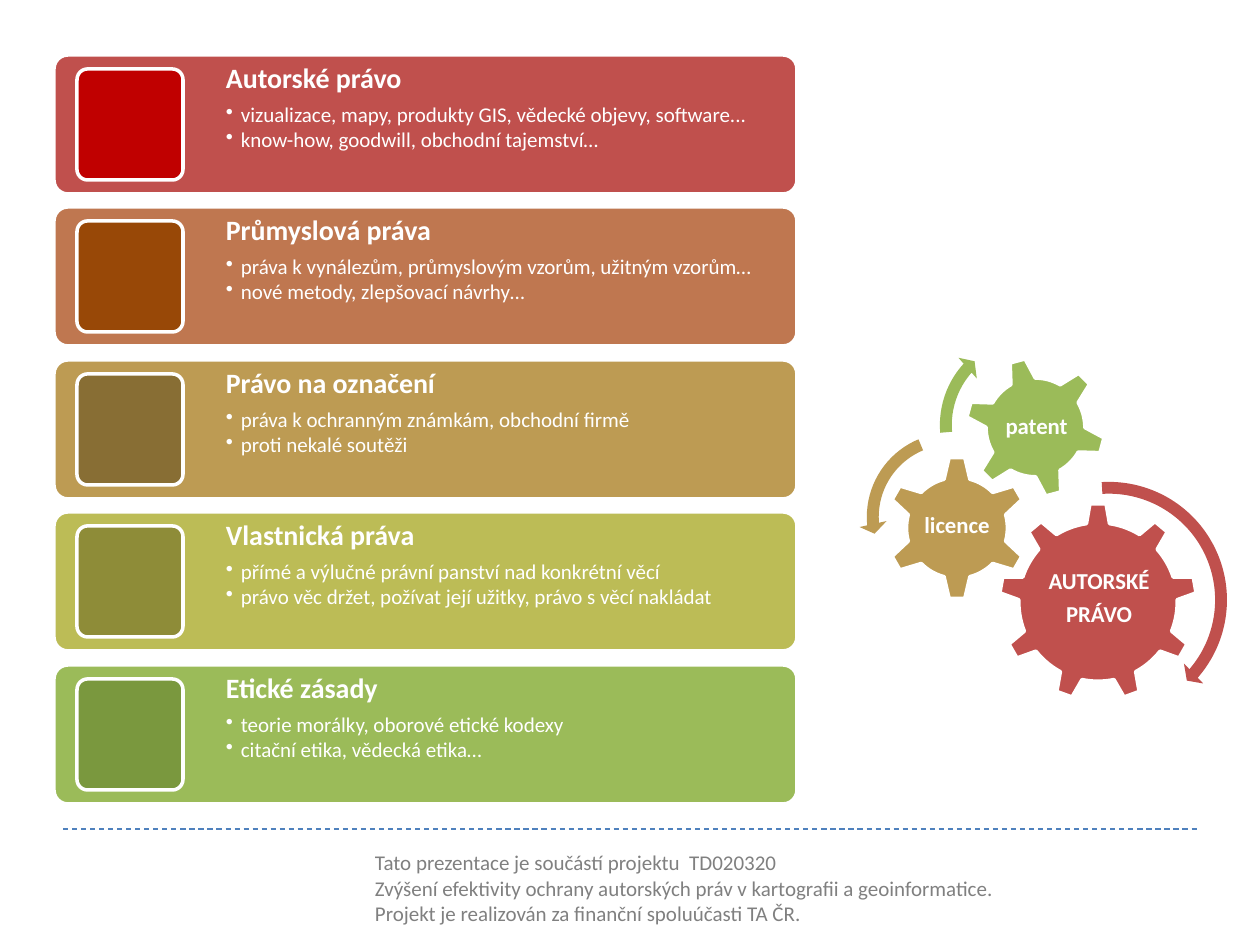
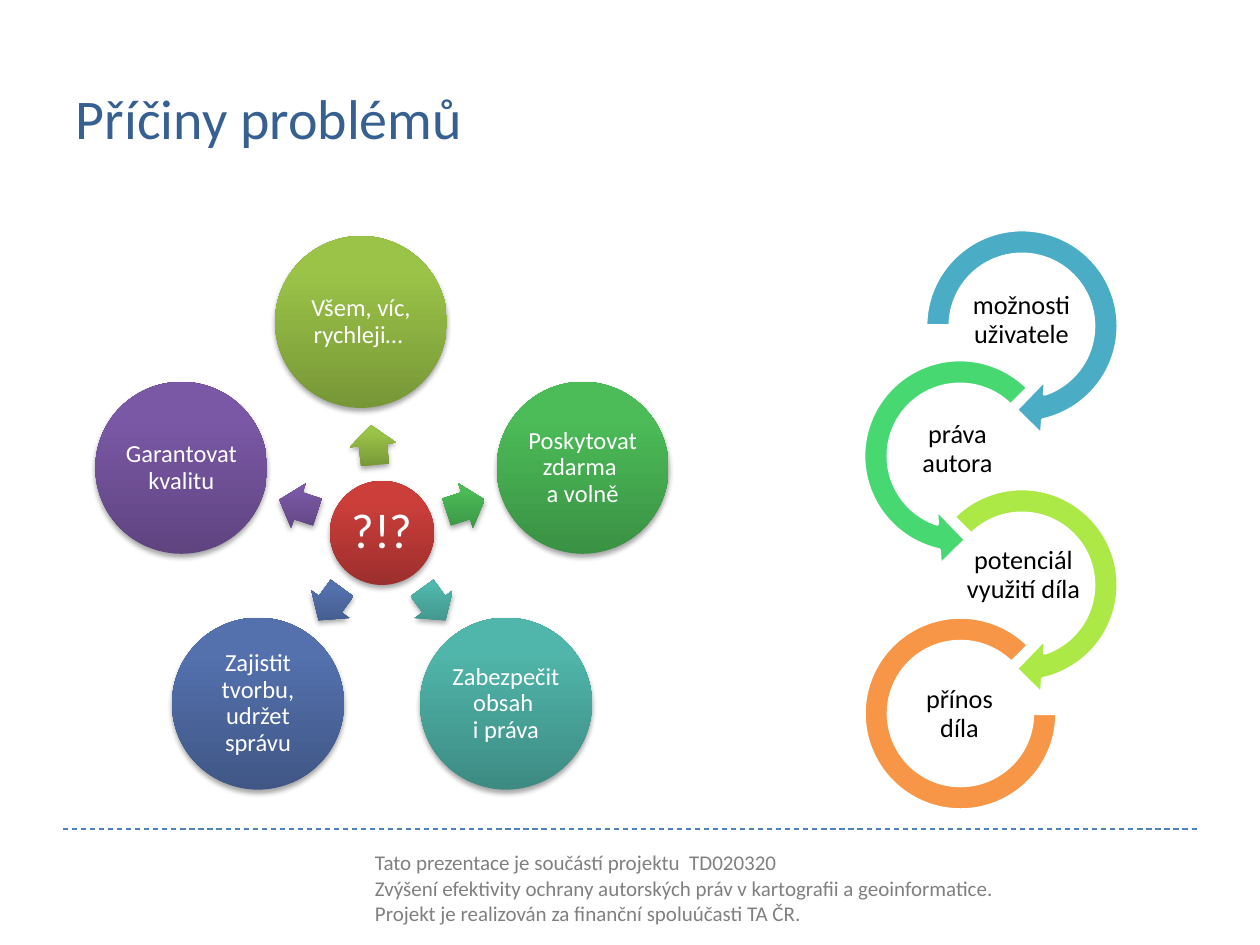
from math import cos, radians, sin

from pptx import Presentation
from pptx.dml.color import RGBColor
from pptx.enum.dml import MSO_LINE
from pptx.enum.shapes import MSO_CONNECTOR, MSO_SHAPE as SHP
from pptx.enum.text import MSO_ANCHOR as ANC, PP_ALIGN as AL
from pptx.oxml import parse_xml
from pptx.oxml.ns import nsdecls, qn
from pptx.util import Pt

PX = 914400 / 126
FONT = "Calibri"
COLORS = {
    "white": "FFFFFF", "black": "000000", "grey": "808080",
    "title": "376092", "rule": "4F81BD",
    "red": "C0504D", "rust": "BF7750", "gold": "BD9B53",
    "olive": "BCBC56", "green": "9BBB59",
    "red_icon": "C00000", "rust_icon": "984807", "gold_icon": "886E34",
    "olive_icon": "8E8C38", "green_icon": "7A983E",
    "teal": "4BACC6", "mint": "47D872", "lime": "ACE946", "orange": "F79646",
}
# Dark and light ends of the gradients on the wheel
GRADIENTS = {
    "red": ("9C2F2D", "CB3E3A"), "lime": ("779737", "9BC348"),
    "green": ("3A9144", "4CBC58"), "teal": ("3D8B83", "50B5AA"),
    "blue": ("405786", "5471AE"), "violet": ("5F4480", "7B58A6"),
}
DIAGRAM = {"alignment": AL.CENTER, "line_spacing": 0.9}
BAND_HEAD = {"line_spacing": 0.9, "space_after": Pt(5.6)}
BAND_ITEM = {"line_spacing": 0.9, "space_after": Pt(1.8)}


def emu(*lengths):
    return [round(n * PX) for n in lengths]


def rgb(name):
    return RGBColor.from_string(COLORS[name])


def add_shape(slide, kind, box, fill, line="white", adj=()):
    sp = slide.shapes.add_shape(kind, *emu(*box))
    sp.shadow.inherit = False
    for i, value in enumerate(adj):
        sp.adjustments[i] = value
    if fill:
        sp.fill.solid()
        sp.fill.fore_color.rgb = rgb(fill)
    if line:
        sp.line.color.rgb = rgb(line)
        sp.line.width = Pt(2)
    else:
        sp.line.fill.background()
    return sp


def add_text_box(slide, box, inset, anchor=ANC.TOP):
    tf = slide.shapes.add_textbox(*emu(*box)).text_frame
    margin_x, margin_y = emu(*inset)
    layout = {
        "word_wrap": True, "vertical_anchor": anchor,
        "margin_left": margin_x, "margin_right": margin_x,
        "margin_top": margin_y, "margin_bottom": margin_y,
    }
    for key, value in layout.items():
        setattr(tf, key, value)
    return tf


def add_line(tf, text, size, color, bold=False, bullet=False, **layout):
    """Write one paragraph; a line feed in the text is a line break."""
    p = tf.paragraphs[0] if not tf.paragraphs[0].runs else tf.add_paragraph()
    p.text = text
    if bullet:
        indent, = emu(15)
        pPr = p._p.get_or_add_pPr()
        pPr.set("marL", str(indent))
        pPr.set("indent", str(-indent))
        pPr.append(parse_xml(f'<a:buChar {nsdecls("a")} char="•"/>'))
    for key, value in layout.items():
        setattr(p, key, value)
    for r in p.runs:
        for key, value in {"name": FONT, "size": Pt(size), "bold": bold}.items():
            setattr(r.font, key, value)
        r.font.color.rgb = rgb(color)


def add_label(slide, box, lines, size, color="white", bold=False, inset=2):
    tf = add_text_box(slide, box, (inset, inset), ANC.MIDDLE)
    for text in lines:
        add_line(tf, text, size, color, bold,
                 space_after=Pt(round(size * 0.35, 1)), **DIAGRAM)


def arrow_adj(band, head, tip, start, head_width):
    """Percentages and degrees to the adjustments of a circular arrow."""
    return [band / 100, head * 0.6, tip * 0.6, start * 0.6, head_width / 100]


def add_gradient(sp, name):
    sp.fill.gradient()
    sp.fill.gradient_angle = 90
    for stop, position, hex_color in zip(sp.fill.gradient_stops, (0, 0.8), GRADIENTS[name]):
        stop.position = position
        stop.color.rgb = RGBColor.from_string(hex_color)
    spPr = sp._element.spPr
    spPr.find(qn("a:gradFill")).set("rotWithShape", "0")
    spPr.find(qn("a:effectLst")).append(parse_xml(
        f'<a:outerShdw {nsdecls("a")} blurRad="{Pt(3.1)}" dist="{Pt(1.8)}" '
        'dir="5400000" rotWithShape="0"><a:srgbClr val="000000">'
        '<a:alpha val="35000"/></a:srgbClr></a:outerShdw>'))


def add_footer(slide):
    # Dashed rule
    x1, x2, y = emu(63, 1197, 829)
    rule = slide.shapes.add_connector(MSO_CONNECTOR.STRAIGHT, x1, y, x2, y)
    rule.line.color.rgb = rgb("rule")
    rule.line.width = Pt(0.75)
    rule.line.dash_style = MSO_LINE.DASH
    rule._element.spPr.append(parse_xml(f'<a:effectLst {nsdecls("a")}/>'))
    # Project note
    tf = add_text_box(slide, (362, 844, 853, 89), (13, 6))
    for text in ("Tato prezentace je součástí projektu  TD020320",
                 "Zvýšení efektivity ochrany autorských práv v kartografii a geoinformatice.",
                 "Projekt je realizován za finanční spoluúčasti TA ČR."):
        add_line(tf, text, 12, "grey")


def add_title(slide, text):
    tf = add_text_box(slide, (63, 38, 1134, 158), (13, 6), ANC.MIDDLE)
    add_line(tf, text, 32, "title")


def add_law_bands(slide, box, bands):
    left, top, width, height = box
    band_h = 139
    for i, (color, head, items) in enumerate(bands):
        y = top + i * (height - band_h) // (len(bands) - 1)
        add_shape(slide, SHP.ROUNDED_RECTANGLE, (left, y, width, band_h), color, adj=[0.1])
        tf = add_text_box(slide, (left + 163, y, width - 163, band_h), (9, 9))
        add_line(tf, head, 16, "white", bold=True, **BAND_HEAD)
        for item in items:
            add_line(tf, item, 12, "white", bullet=True, **BAND_ITEM)
        add_shape(slide, SHP.ROUNDED_RECTANGLE, (left + 23, y + 14, 106, 111),
                  color + "_icon", adj=[0.1])


def add_gears(slide, left, top):
    # Shape, x, y, size, rotation, colour, label lines, label box
    gears = [
        (SHP.GEAR_9, 140, 177, 198, 0, "red", ["AUTORSKÉ", "PRÁVO"], (181, 222, 118, 101)),
        (SHP.GEAR_6, 26, 130, 144, 0, "gold", ["licence"], (62, 165, 72, 71)),
        (SHP.GEAR_6, 106, 31, 141, 345, "green", ["patent"], (138, 62, 79, 79)),
    ]
    for kind, x, y, size, turn, color, lines, (lx, ly, lw, lh) in gears:
        sp = add_shape(slide, kind, (left + x, top + y, size, size), color)
        sp.rotation = turn
        add_label(slide, (left + lx, top + ly, lw, lh), lines, 13, bold=True)
    # Turning arrows
    arrows = [
        (SHP.CIRCULAR_ARROW, 124, 148, 252, "red", (4.7, 5, 41, 266.5, 5.5)),
        (SHP.LEFT_CIRCULAR_ARROW, 0, 99, 184, "gold", (6.5, 7.2, 174.8, 247.3, 7.5)),
        (SHP.CIRCULAR_ARROW, 73, 0, 198, "green", (6, 6.6, 221.9, 175.1, 7)),
    ]
    for kind, x, y, size, color, adj in arrows:
        add_shape(slide, kind, (left + x, top + y, size, size), color, None, arrow_adj(*adj))


def add_wheel(slide, cx, cy, hub_text, causes):
    def centred(kind, x, y, w, h, color):
        sp = add_shape(slide, kind, (x - w / 2, y - h / 2, w, h), None, None)
        add_gradient(sp, color)
        return sp

    # Hub
    centred(SHP.OVAL, cx, cy, 104, 104, "red")
    add_label(slide, (cx - 37, cy - 37, 74, 74), [hub_text], 28, inset=5)
    # Causes, clockwise from the top; the top one sits a little to the left
    for i, (color, text) in enumerate(causes):
        angle = -90 + i * 360 / len(causes)
        dx, dy = cos(radians(angle)), sin(radians(angle))
        arrow_shift, cause_shift, tilt = (-9, -21, -5.7) if i == 0 else (0, 0, 0)
        arrow = centred(SHP.RIGHT_ARROW, cx + 88 * dx + arrow_shift, cy + 88 * dy, 40, 47, color)
        arrow.adjustments[0] = 0.6
        arrow.rotation = (angle + tilt) % 360
        x, y = cx + 211 * dx + cause_shift, cy + 211 * dy
        centred(SHP.OVAL, x, y, 172, 172, color)
        add_label(slide, (x - 61, y - 61, 122, 122), [text], 14)


def add_ring_chain(slide, left, top):
    right, left_turn = SHP.CIRCULAR_ARROW, SHP.LEFT_CIRCULAR_ARROW
    # Shape, x, y, size, colour, adjustments, label, label x and y
    rings = [
        (right, 62, 0, 224, "teal", arrow_adj(11, 19, 75, 180, 12.5),
         "možnosti\nuživatele", 111, 75),
        (left_turn, 0, 130, 224, "mint", arrow_adj(11, 19, 105, 315, 12.5),
         "práva\nautora", 47, 204),
        (right, 62, 259, 224, "lime", arrow_adj(11, 19, 75, 225, 12.5),
         "potenciál\nvyužití díla", 113, 330),
        (SHP.BLOCK_ARC, 16, 403, 193, "orange", [0, 315 * 0.6, 0.127],
         "přínos\ndíla", 49, 469),
    ]
    for kind, x, y, size, color, adj, text, lx, ly in rings:
        add_shape(slide, kind, (left + x, top + y, size, size), color, adj=adj)
        add_label(slide, (left + lx, top + ly, 125, 63), [text], 15, "black", inset=1)


def build_law_slide(slide):
    add_footer(slide)
    add_law_bands(slide, (54, 55, 743, 749), [
        ("red", "Autorské právo",
         ["vizualizace, mapy, produkty GIS, vědecké objevy, software...",
          "know-how, goodwill, obchodní tajemství…"]),
        ("rust", "Průmyslová práva",
         ["práva k vynálezům, průmyslovým vzorům, užitným vzorům…",
          "nové metody, zlepšovací návrhy…"]),
        ("gold", "Právo na označení",
         ["práva k ochranným známkám, obchodní firmě",
          "proti nekalé soutěži"]),
        ("olive", "Vlastnická práva",
         ["přímé a výlučné právní panství nad konkrétní věcí",
          "právo věc držet, požívat její užitky, právo s věcí nakládat"]),
        ("green", "Etické zásady",
         ["teorie morálky, oborové etické kodexy",
          "citační etika, vědecká etika…"]),
    ])
    add_gears(slide, 859, 326)


def build_causes_slide(slide):
    add_footer(slide)
    add_title(slide, "Příčiny problémů")
    add_wheel(slide, 382, 533, "?!?", [
        ("lime", "Všem, víc, rychleji… "),
        ("green", "Poskytovat zdarma \na volně"),
        ("teal", "Zabezpečit obsah \ni práva"),
        ("blue", "Zajistit tvorbu, udržet správu"),
        ("violet", "Garantovat\nkvalitu"),
    ])
    add_ring_chain(slide, 848, 214)


def main():
    prs = Presentation()
    prs.slide_width, prs.slide_height = emu(1260, 945)
    for build in (build_law_slide, build_causes_slide):
        build(prs.slides.add_slide(prs.slide_layouts[6]))
    prs.save("out.pptx")


if __name__ == "__main__":
    main()
